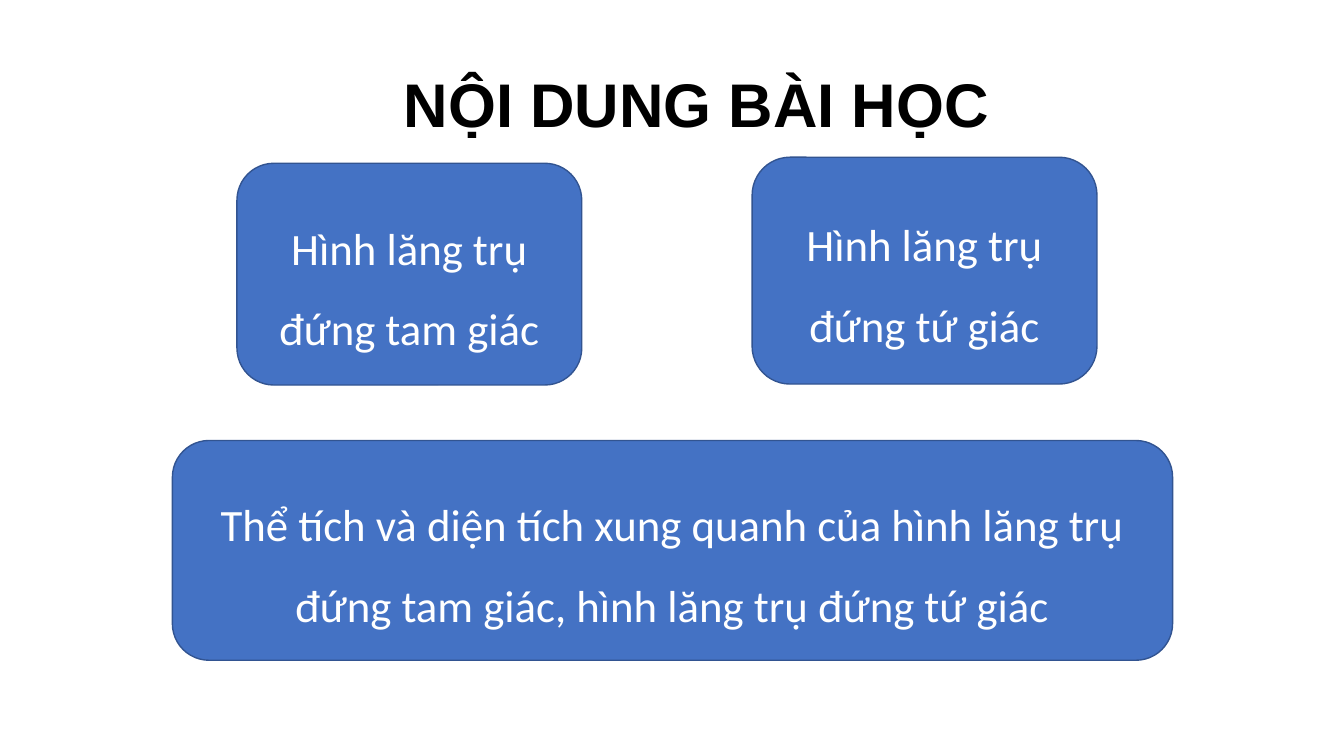
from pptx import Presentation
from pptx.dml.color import RGBColor
from pptx.enum.shapes import MSO_SHAPE
from pptx.enum.text import MSO_ANCHOR, PP_ALIGN
from pptx.util import Inches, Pt

ROUNDED = MSO_SHAPE.ROUNDED_RECTANGLE
MIDDLE = MSO_ANCHOR.MIDDLE
CENTER = PP_ALIGN.CENTER
BLACK = RGBColor(0x00, 0x00, 0x00)
WHITE = RGBColor(0xFF, 0xFF, 0xFF)
BLUE = RGBColor(0x44, 0x72, 0xC4)
DARK_BLUE = RGBColor(0x32, 0x54, 0x91)

TOPICS = [
    ("Hình lăng trụ đứng tam giác", 2.35, 1.62, 3.42, 2.2),
    ("Hình lăng trụ đứng tứ giác", 7.46, 1.56, 3.42, 2.25),
    ("Thể tích và diện tích xung quanh của hình lăng trụ "
     "đứng tam giác, hình lăng trụ đứng tứ giác", 1.71, 4.37, 9.92, 2.18),
]


def set_text(tf, text, font, size, color, spacing, bold=False):
    tf.word_wrap = True
    tf.text = text
    p = tf.paragraphs[0]
    p.alignment = CENTER
    p.line_spacing = spacing
    r = p.runs[0]
    r.font.name = font
    r.font.size = Pt(size)
    r.font.bold = bold
    r.font.color.rgb = color


prs = Presentation()
prs.slide_width = Inches(13.33)
prs.slide_height = Inches(7.5)
s = prs.slides.add_slide(prs.slide_layouts[6])

title = s.shapes.add_textbox(Inches(3.14), Inches(0.39), Inches(7.54), Inches(0.9))
tf = title.text_frame
tf.margin_left = tf.margin_right = tf.margin_top = tf.margin_bottom = 0
set_text(tf, "NỘI DUNG BÀI HỌC", "Arial", 44, BLACK, Pt(72), bold=True)

for text, left, top, width, height in TOPICS:
    sp = s.shapes.add_shape(ROUNDED, Inches(left), Inches(top), Inches(width), Inches(height))
    sp.shadow.inherit = False
    sp.fill.solid()
    sp.fill.fore_color.rgb = BLUE
    sp.line.color.rgb = DARK_BLUE
    sp.line.width = Pt(1)
    sp.text_frame.vertical_anchor = MIDDLE
    set_text(sp.text_frame, text, "Calibri", 32, WHITE, 1.5)

prs.save("out.pptx")
